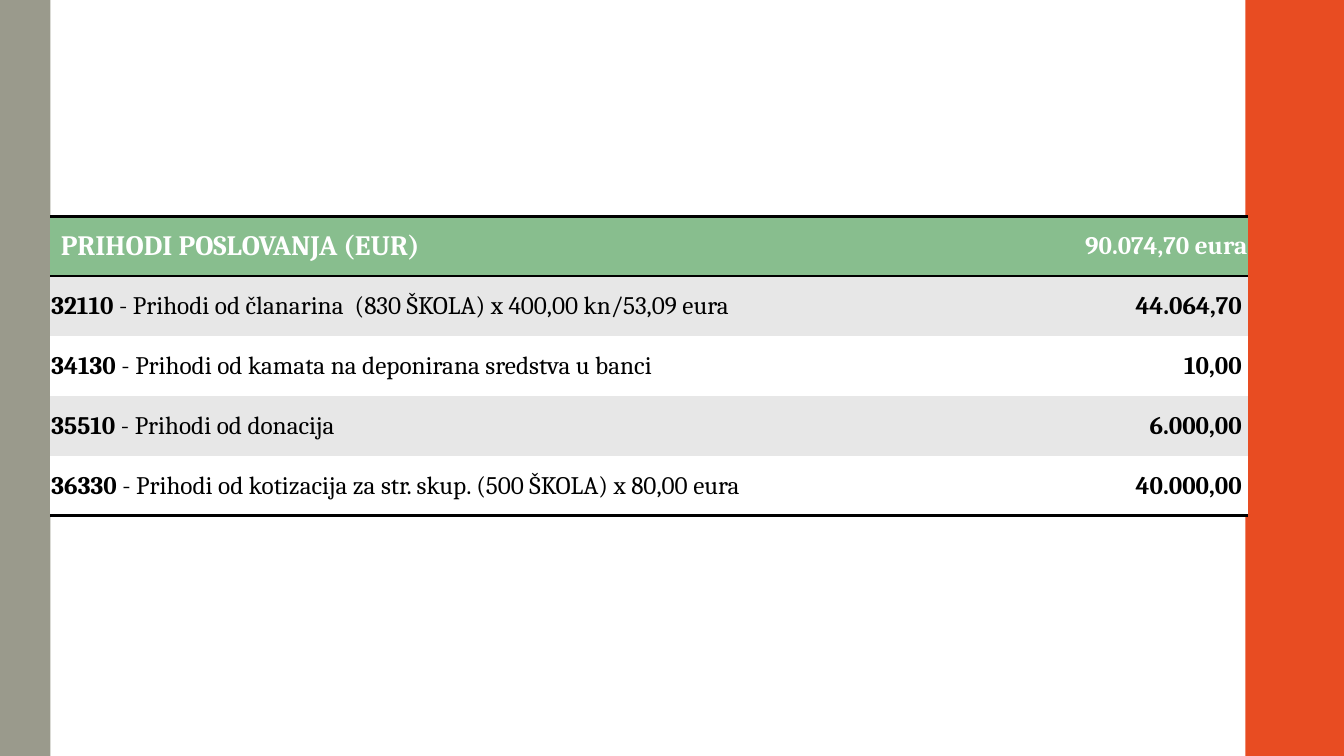
from lxml.etree import SubElement as Sub
from pptx import Presentation
from pptx.dml.color import RGBColor as Rgb
from pptx.enum.shapes import MSO_SHAPE as Shape
from pptx.enum.text import MSO_ANCHOR as Anchor, PP_ALIGN as Align
from pptx.oxml.ns import qn
from pptx.util import Pt

PX = 9525
WIDE, HIGH = 1280, 720
COLORS = {"red": "E84C22", "gray": "9A9A8C", "green": "88BE8E",
          "band": "E7E7E7", "white": "FFFFFF", "black": "000000"}
FONT = "Cambria"
PLAIN = "{2D5ABB26-0587-4C30-8999-92F81FD0307C}"  # table style without grid
TIGHT = {"margin_left": PX, "margin_right": PX, "margin_top": PX, "margin_bottom": 0}
LOOSE = {"margin_left": 10 * PX, "margin_right": 10 * PX}

TITLE = ("PRIHODI POSLOVANJA (EUR)", "90.074,70 eura")
ITEMS = [
    ("32110", " - Prihodi od članarina  (830 ŠKOLA) x 400,00 kn/53,09 eura", "44.064,70 "),
    ("34130", " - Prihodi od kamata na deponirana sredstva u banci", "10,00 "),
    ("35510", " - Prihodi od donacija", "6.000,00 "),
    ("36330", " - Prihodi od kotizacija za str. skup. (500 ŠKOLA) x 80,00 eura", "40.000,00 "),
]


def rgb(name):
    return Rgb.from_string(COLORS[name])


def apply(item, values):
    for key, value in values.items():
        setattr(item, key, value)


def add_bar(slide, box, color):
    bar = slide.shapes.add_shape(Shape.RECTANGLE, *(n * PX for n in box))
    bar.shadow.inherit = False
    bar.fill.solid()
    bar.fill.fore_color.rgb = rgb(color)
    bar.line.fill.background()


def add_rule(cell, side):
    """Draw a black line on the side "T" or "B" of a cell."""
    line = Sub(cell._tc.get_or_add_tcPr(), qn("a:ln" + side), w=str(Pt(2)))
    fill = Sub(line, qn("a:solidFill"))
    Sub(fill, qn("a:srgbClr"), val=COLORS["black"])


def fill_cell(cell, runs, fill, color, size=18, align=Align.LEFT, inset=TIGHT, rules=""):
    """Write (text, bold) runs into a cell and style it."""
    for side in rules:
        add_rule(cell, side)
    apply(cell, {"vertical_anchor": Anchor.MIDDLE, **inset})
    cell.fill.solid()
    cell.fill.fore_color.rgb = rgb(fill)
    para = cell.text_frame.paragraphs[0]
    para.alignment = align
    for text, bold in runs:
        run = para.add_run()
        run.text = text
        apply(run.font, {"name": FONT, "size": Pt(size), "bold": bold})
        run.font.color.rgb = rgb(color)


def add_income(slide, box):
    left, top, width, height = box
    count = len(ITEMS) + 1
    frame = slide.shapes.add_table(count, 2, *(n * PX for n in box))
    table = frame.table
    apply(table, {"first_row": False, "horz_banding": False})
    table._tbl.tblPr.find(qn("a:tableStyleId")).text = PLAIN
    sums = 259
    for col, size in zip(table.columns, (width - sums, sums)):
        col.width = size * PX
    for row in table.rows:
        row.height = height * PX // count

    head = {"fill": "green", "color": "white", "rules": "TB"}
    fill_cell(table.cell(0, 0), [(TITLE[0], True)], size=20, inset=LOOSE, **head)
    fill_cell(table.cell(0, 1), [(TITLE[1], True)], align=Align.RIGHT, **head)
    for row, (code, label, total) in enumerate(ITEMS, 1):
        look = {"fill": "band" if row % 2 else "white", "color": "black",
                "rules": "B" if row == len(ITEMS) else ""}
        fill_cell(table.cell(row, 0), [(code, True), (label, False)], **look)
        fill_cell(table.cell(row, 1), [(total, True)], align=Align.RIGHT, **look)


def main():
    deck = Presentation()
    apply(deck, {"slide_width": WIDE * PX, "slide_height": HIGH * PX})
    slide = deck.slides.add_slide(deck.slide_layouts[6])
    add_bar(slide, (1186, 0, WIDE - 1186, HIGH), "red")
    add_bar(slide, (0, 0, 48, HIGH), "gray")
    add_income(slide, (48, 206, 1141, 285))
    deck.save("out.pptx")


if __name__ == "__main__":
    main()
